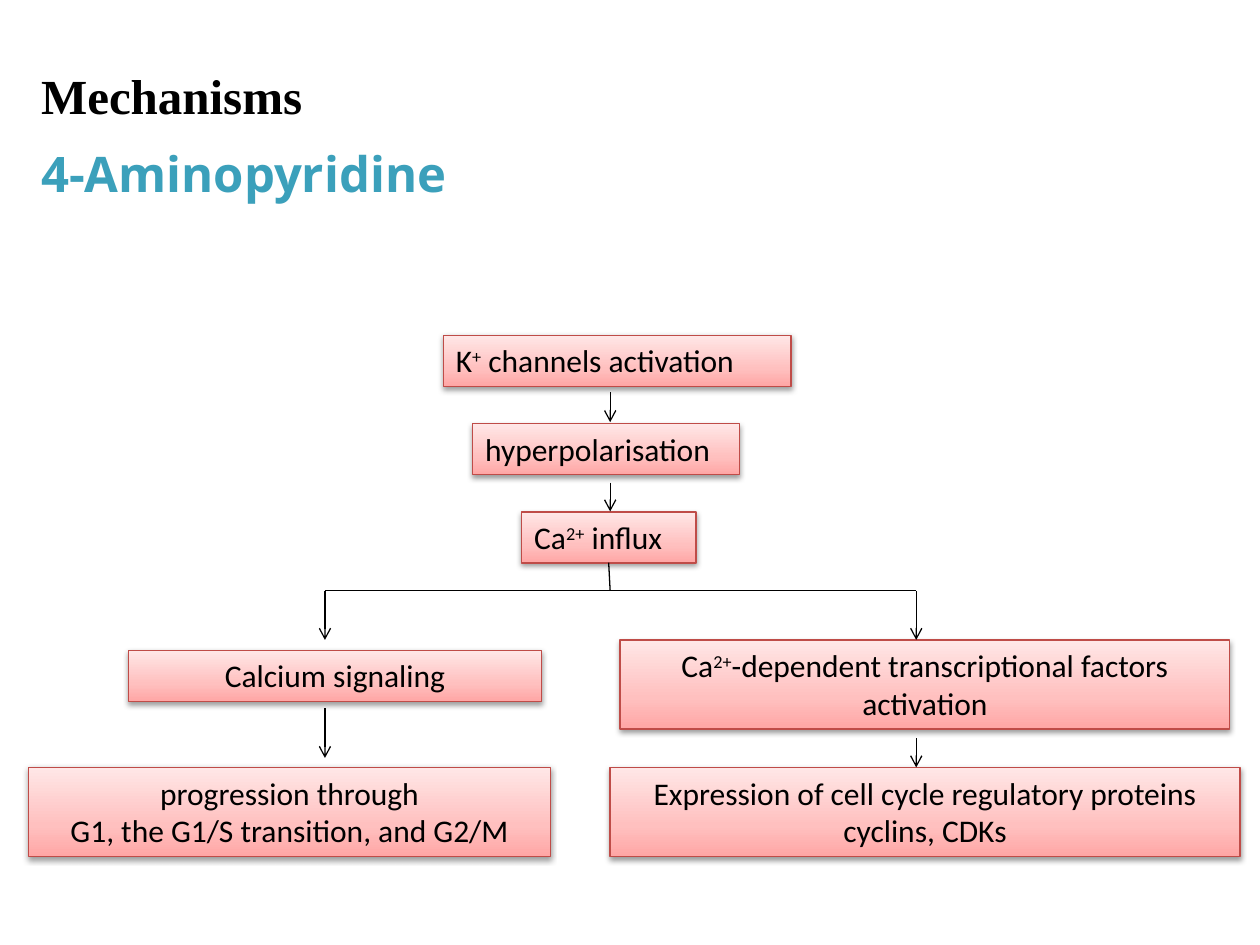
from copy import deepcopy

from lxml.etree import SubElement
from pptx import Presentation
from pptx.dml.color import RGBColor
from pptx.enum.shapes import MSO_CONNECTOR, MSO_SHAPE
from pptx.enum.text import MSO_ANCHOR, MSO_AUTO_SIZE, PP_ALIGN as Align
from pptx.oxml.ns import qn
from pptx.util import Cm, Pt

BLACK = RGBColor(0x00, 0x00, 0x00)
TEAL = RGBColor(0x3B, 0xA0, 0xBB)
BORDER = RGBColor(0xBF, 0x4C, 0x48)
GRADIENT = [
    (0, RGBColor(0xFF, 0xA6, 0xA5)),
    (0.35, RGBColor(0xFF, 0xC0, 0xBF)),
    (1, RGBColor(0xFF, 0xE7, 0xE7)),
]

HEADINGS = [
    ("4-Aminopyridine", 2.77, "Noto Sans", TEAL),
    ("Mechanisms", 1.19, "Times New Roman", BLACK),
]

# Text between carets is superscript.
CHAIN_TOP, CHAIN_STEP = 6.76, 1.78
CHAIN = [
    ("K^+^ channels activation", 8.94, 7.01, True),
    ("hyperpolarisation", 9.53, 5.38, True),
    ("Ca^2+^ influx", 10.52, 3.51, False),
]
OUTCOMES = [
    ("Ca^2+^-dependent transcriptional factors activation", 12.5, 12.9, 12.29, 1.8),
    ("Expression of cell cycle regulatory proteins\ncyclins, CDKs", 12.3, 15.47, 12.7, 1.8),
    ("progression through\nG1, the G1/S transition, and G2/M", 0.58, 15.47, 10.52, 1.8),
    ("Calcium signaling", 2.59, 13.11, 8.33, 1.03),
]

LEFT, MIDDLE, RIGHT, FORK = 6.55, 12.3, 18.47, 11.91
LINES = [
    (LEFT, FORK, RIGHT, FORK),
    (12.27, 11.34, MIDDLE, FORK),
]
ARROWS = [
    (RIGHT, FORK, 12.9),
    (LEFT, FORK, 12.9),
    (RIGHT, 14.88, 15.47),
    (LEFT, 14.28, 15.28),
    (MIDDLE, 9.73, 10.31),
    (MIDDLE, 7.91, 8.51),
]

deck = Presentation()
deck.slide_width, deck.slide_height = Cm(25.4), Cm(19.05)
slide = deck.slides.add_slide(deck.slide_layouts[6])


def write(shape, text, *, font="Calibri", size=18, color=BLACK, bold=False,
          align=Align.LEFT, wrap=True):
    frame = shape.text_frame
    frame.word_wrap = wrap
    frame.auto_size = MSO_AUTO_SIZE.SHAPE_TO_FIT_TEXT
    frame.vertical_anchor = MSO_ANCHOR.TOP
    for row, line in enumerate(text.split("\n")):
        paragraph = frame.add_paragraph() if row else frame.paragraphs[0]
        paragraph.alignment = align
        for part, words in enumerate(line.split("^")):
            run = paragraph.add_run()
            run.text = words
            run.font.name, run.font.size = font, Pt(size)
            run.font.bold, run.font.color.rgb = bold, color
            if part % 2:
                run._r.get_or_add_rPr().set("baseline", "30000")


def add_box(text, left, top, width, height, **style):
    box = slide.shapes.add_shape(
        MSO_SHAPE.RECTANGLE, Cm(left), Cm(top), Cm(width), Cm(height))
    box.fill.gradient()
    box.fill.gradient_angle = 90
    stops = box._element.spPr.find(".//" + qn("a:gsLst"))
    stops.insert(1, deepcopy(stops[0]))
    for stop, (position, color) in zip(box.fill.gradient_stops, GRADIENT):
        stop.position, stop.color.rgb = position, color
    box.line.color.rgb, box.line.width = BORDER, Pt(0.75)
    box.shadow.inherit = False
    effects = box._element.spPr.find(qn("a:effectLst"))
    shadow = SubElement(effects, qn("a:outerShdw"), blurRad="40000",
                        dist="20000", dir="5400000", rotWithShape="0")
    tint = SubElement(shadow, qn("a:srgbClr"), val=str(BLACK))
    SubElement(tint, qn("a:alpha"), val="38000")
    write(box, text, **style)


def add_line(x1, y1, x2, y2, arrow=False):
    line = slide.shapes.add_connector(
        MSO_CONNECTOR.STRAIGHT, Cm(x1), Cm(y1), Cm(x2), Cm(y2))
    line.line.color.rgb, line.line.width = BLACK, Pt(0.75)
    if arrow:
        SubElement(line.line._get_or_add_ln(), qn("a:tailEnd"), type="arrow")
    SubElement(line._element.spPr, qn("a:effectLst"))


for text, top, font, color in HEADINGS:
    heading = slide.shapes.add_textbox(Cm(0.58), Cm(top), Cm(19.84), Cm(1.45))
    write(heading, text, font=font, size=28, color=color, bold=True)

for step, (text, left, width, wrap) in enumerate(CHAIN):
    add_box(text, left, CHAIN_TOP + step * CHAIN_STEP, width, 1.03, wrap=wrap)

for text, left, top, width, height in OUTCOMES:
    add_box(text, left, top, width, height, align=Align.CENTER)

for ends in LINES:
    add_line(*ends)
for x, start, end in ARROWS:
    add_line(x, start, x, end, arrow=True)

deck.save("out.pptx")
